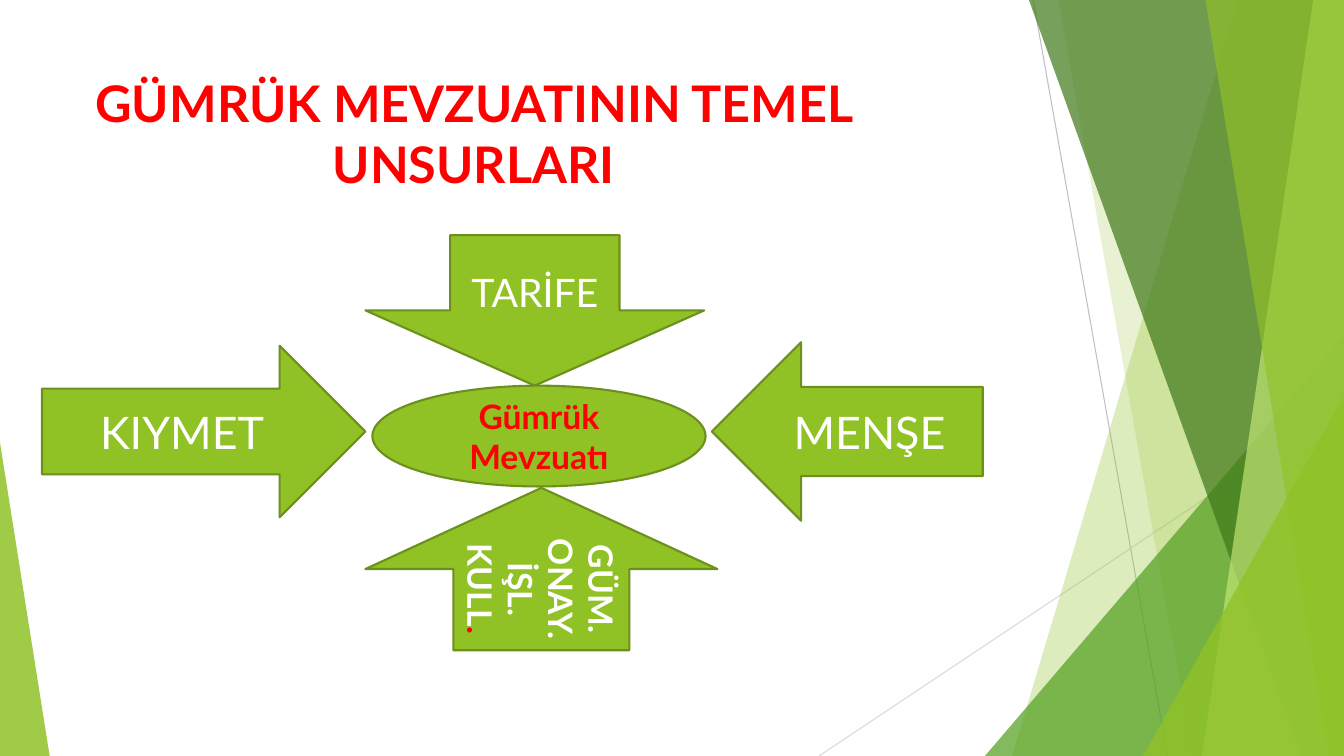
"""Build a slide with four arrows pointing at the core of customs law."""
import pptx
import pptx.dml.color
import pptx.enum.shapes
import pptx.enum.text
import pptx.oxml
import pptx.oxml.ns
import pptx.util
from lxml import etree

Pt = pptx.util.Pt
SHAPES = pptx.enum.shapes.MSO_SHAPE
ANCHORS = pptx.enum.text.MSO_ANCHOR
WIDTH, HEIGHT = 960, 540
FONT = "Lato"
COLORS = {
    "green": "90C226", "outline": "6B901C", "leaf": "54A021", "forest": "3F7819",
    "lime": "C0E474", "red": "FF0000", "white": "FFFFFF",
    "gray": "BFBFBF", "light_gray": "D9D9D9",
}


def color(name):
    """Return the named colour."""
    return pptx.dml.color.RGBColor.from_string(COLORS[name])


def fill_facet(shape, name, opacity):
    """Give a borderless shape a see-through fill."""
    shape.shadow.inherit = False
    shape.line.fill.background()
    shape.fill.solid()
    shape.fill.fore_color.rgb = color(name)
    srgb = shape.fill._xPr.find(".//" + pptx.oxml.ns.qn("a:srgbClr"))
    etree.SubElement(srgb, pptx.oxml.ns.qn("a:alpha"), val=str(opacity * 1000))


def add_thin_line(slide, start, end, name):
    """Draw a hairline between two points."""
    line = slide.shapes.add_connector(
        pptx.enum.shapes.MSO_CONNECTOR.STRAIGHT, *map(Pt, start + end))
    line.line.color.rgb = color(name)
    line.line.width = Pt(0.75)
    etree.SubElement(line._element.spPr, pptx.oxml.ns.qn("a:effectLst"))


def add_band(slide, box, top_x, bottom_x, name, opacity):
    """Fill the area from a slanted edge to the right side of the box."""
    left, top, width, height = box
    right, bottom = left + width, top + height
    builder = slide.shapes.build_freeform(Pt(left + top_x), Pt(top))
    corners = [(right, top), (right, bottom), (left + bottom_x, bottom)]
    builder.add_line_segments([(Pt(x), Pt(y)) for x, y in corners])
    fill_facet(builder.convert_to_shape(), name, opacity)


def add_corner(slide, box, peak, name, opacity):
    """Add a triangle whose peak lies at a share of its width."""
    shape = slide.shapes.add_shape(SHAPES.ISOSCELES_TRIANGLE, *map(Pt, box))
    shape.adjustments[0] = peak
    fill_facet(shape, name, opacity)


def add_facets(slide, box):
    """Layer the green facets on both sides of the box."""
    left, top, width, height = box
    right, bottom = left + width, top + height
    add_thin_line(slide, (left + 738, top), (left + 834, bottom), "gray")
    add_thin_line(slide, (right, top + 290), (left + 585, bottom), "light_gray")
    add_band(slide, box, 884, 723, "green", 30)
    add_band(slide, box, 756, 852, "green", 20)
    add_corner(slide, (right - 256.5, bottom - 300, 256.5, 300), 1, "leaf", 72)
    add_band(slide, box, 735, 929.5, "forest", 70)
    add_band(slide, box, 938, 858.5, "lime", 70)
    add_band(slide, box, 861, 949, "green", 65)
    add_corner(slide, (right - 143.5, bottom - 257, 143.5, 257), 1, "green", 80)
    add_corner(slide, (left, bottom - 224, 35.5, 224), 0, "green", 85)


def write_text(shape, lines, size, name, bold):
    """Write centred paragraphs of one style."""
    frame = shape.text_frame
    frame.word_wrap = True
    frame.text = "\n".join(lines)
    for paragraph in frame.paragraphs:
        paragraph.alignment = pptx.enum.text.PP_ALIGN.CENTER
        paragraph.font.name = FONT
        paragraph.font.size = Pt(size)
        paragraph.font.bold = bold
        paragraph.font.color.rgb = color(name)


def add_title(slide, box):
    """Add the red slide title."""
    shape = slide.shapes.add_textbox(*map(Pt, box))
    write_text(shape, ["GÜMRÜK MEVZUATININ TEMEL UNSURLARI"], 36, "red", True)


def add_node(slide, kind, box, lines, size, name="white", bold=False):
    """Add an outlined green shape with centred text."""
    shape = slide.shapes.add_shape(kind, *map(Pt, box))
    shape.shadow.inherit = False
    shape.fill.solid()
    shape.fill.fore_color.rgb = color("green")
    shape.line.color.rgb = color("outline")
    shape.line.width = Pt(1.5)
    shape.text_frame.vertical_anchor = ANCHORS.MIDDLE
    write_text(shape, lines, size, name, bold)
    return shape


def add_diagram(slide, box):
    """Point four arrows at the ellipse in the middle of the box."""
    left, top, width, height = box
    right, bottom = left + width, top + height
    add_node(slide, SHAPES.DOWN_ARROW, (left + 231, top, 242, 107.5), ["TARİFE"], 28)
    add_node(slide, SHAPES.RIGHT_ARROW, (left, top + 79, 231, 122.5), ["KIYMET"], 32)
    add_node(slide, SHAPES.LEFT_ARROW, (right - 193.5, top + 76.5, 193.5, 127.5), ["MENŞE"], 32)
    add_node(slide, SHAPES.OVAL, (left + 236, top + 107.5, 238, 72),
             ["Gümrük Mevzuatı"], 24, "red", True)
    approval = add_node(slide, SHAPES.UP_ARROW, (left + 231, bottom - 116, 251.5, 116),
                        ["GÜM.", "ONAY.", "İŞL.", "KULL"], 24, bold=True)
    approval.text_frame._txBody.bodyPr.set("vert", "vert")
    period = approval.text_frame.paragraphs[-1].add_run()
    period.text = "."
    period.font.color.rgb = color("red")


def main():
    """Build and save the presentation."""
    presentation = pptx.Presentation()
    presentation.slide_width, presentation.slide_height = Pt(WIDTH), Pt(HEIGHT)
    slide = presentation.slides.add_slide(presentation.slide_layouts[6])
    add_facets(slide, (0, 0, WIDTH, HEIGHT))
    add_title(slide, (0, 48, 677, 104))
    add_diagram(slide, (30, 168, 672, 296.5))
    presentation.save("out.pptx")


if __name__ == "__main__":
    main()
